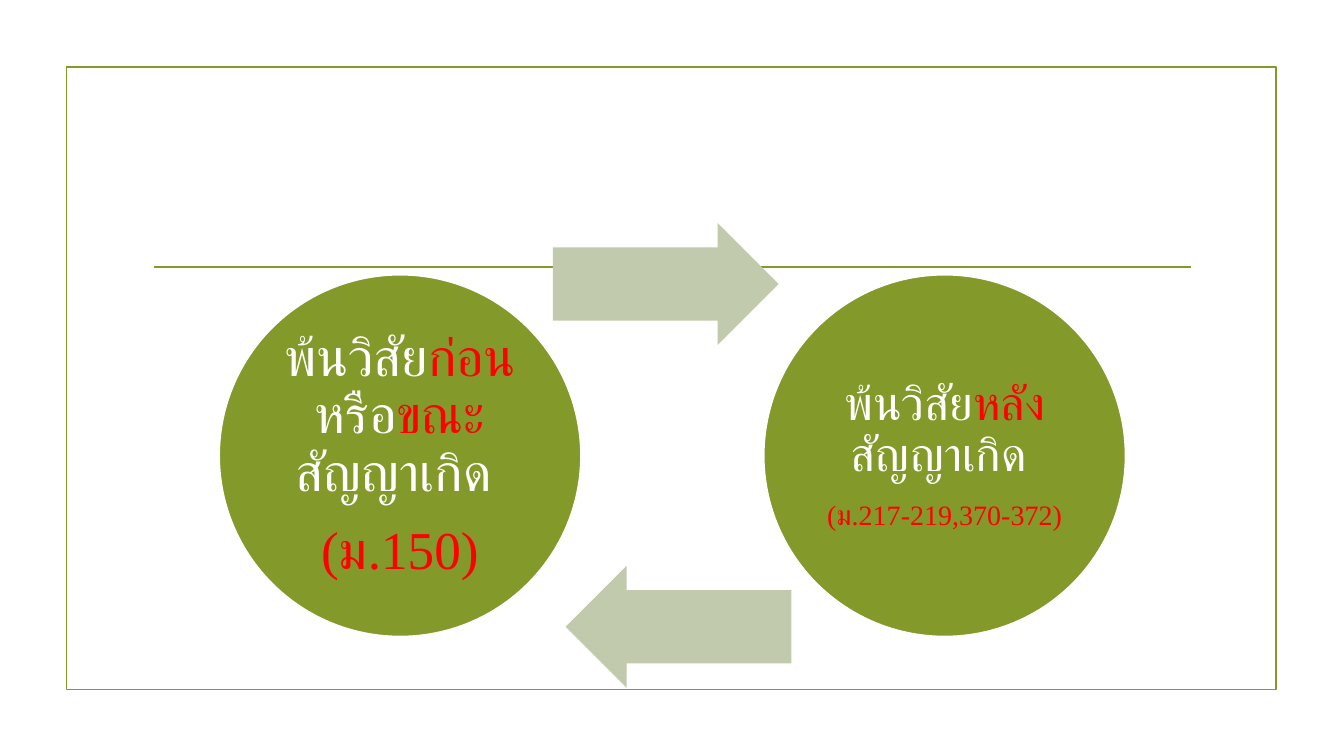
from lxml import etree
from pptx import Presentation, util as u
from pptx.dml.color import RGBColor
from pptx.enum import shapes, text
from pptx.oxml.ns import qn

GREEN = RGBColor(0x83, 0x99, 0x2A)
SAGE = RGBColor(0xC1, 0xCA, 0xAD)
WHITE = RGBColor(0xFF, 0xFF, 0xFF)
RED = RGBColor(0xFF, 0x00, 0x00)
FACE = "Times New Roman"
SHAPE = shapes.MSO_SHAPE

deck = Presentation()
deck.slide_width, deck.slide_height = u.Pt(960), u.Pt(540)
slide = deck.slides.add_slide(deck.slide_layouts[6])


def draw(kind, box, fill, edge):
    item = slide.shapes.add_shape(kind, *map(u.Pt, box))
    item.shadow.inherit = False
    if fill is None:
        item.fill.background()
    else:
        item.fill.solid()
        item.fill.fore_color.rgb = fill
    if edge is None:
        item.line.fill.background()
    else:
        item.line.color.rgb = edge
        item.line.width = u.Pt(1.25)
    return item


draw(SHAPE.RECTANGLE, (47.5, 48, 864, 444.5), None, GREEN)

rule = slide.shapes.add_connector(
    shapes.MSO_CONNECTOR.STRAIGHT, u.Pt(110), u.Pt(190.8), u.Pt(850.5), u.Pt(190.8))
rule.line.color.rgb = GREEN
rule.line.width = u.Pt(1.25)
etree.SubElement(rule._element.spPr, qn("a:effectLst"))

frame = {
    "word_wrap": True,
    "vertical_anchor": text.MSO_ANCHOR.MIDDLE,
    "margin_left": u.Pt(3.6),
    "margin_right": u.Pt(3.6),
    "margin_top": u.Pt(3.6),
    "margin_bottom": u.Pt(3.6),
}

stages = [
    (156.5, 38, 38,
     [("พ้นวิสัย", WHITE), ("ก่อน", RED), ("หรือ", WHITE), ("ขณะ", RED), ("สัญญาเกิด ", WHITE)],
     "(ม.150)"),
    (545.5, 34, 20,
     [("พ้นวิสัย", WHITE), ("หลัง", RED), ("สัญญาเกิด ", WHITE)],
     "(ม.217-219,370-372)"),
]
arrows = [(394.9, 159.3, 0), (404, 404, 180)]

for (left, big, small, words, law), (x, y, turn) in zip(stages, arrows):
    draw(SHAPE.OVAL, (left, 196.2, 258.5, 258.5), GREEN, WHITE)
    label = slide.shapes.add_textbox(*map(u.Pt, (left + 37.8, 234, 182.9, 182.9)))
    body = label.text_frame
    for key, value in frame.items():
        setattr(body, key, value)

    lines = [(body.paragraphs[0], big, words), (body.add_paragraph(), small, [(law, RED)])]
    for para, size, parts in lines:
        style = {
            "alignment": text.PP_ALIGN.CENTER,
            "line_spacing": 0.9,
            "space_after": u.Pt(round(size * 0.4)),
        }
        for key, value in style.items():
            setattr(para, key, value)
        for word, tint in parts:
            run = para.add_run()
            run.text = word
            run.font.size = u.Pt(size)
            run.font.name = FACE
            run.font.color.rgb = tint
            etree.SubElement(run._r.get_or_add_rPr(), qn("a:cs"), typeface=FACE)

    arrow = draw(SHAPE.RIGHT_ARROW, (x, y, 161.3, 87.2), SAGE, None)
    arrow.adjustments[0] = 0.6
    arrow.adjustments[1] = 0.5
    arrow.rotation = turn

deck.save("out.pptx")
